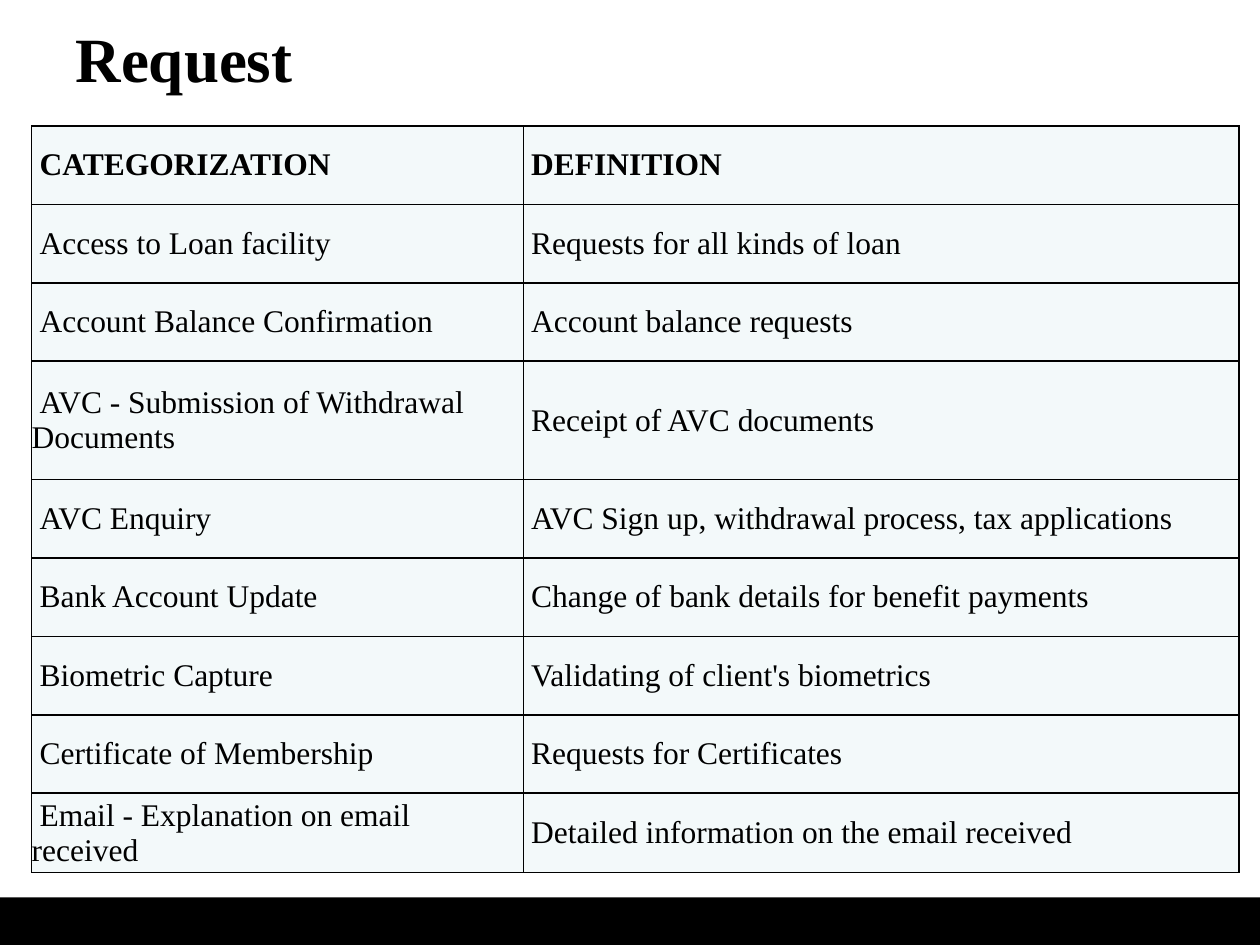
from lxml.etree import SubElement
from pptx import Presentation
from pptx.dml.color import RGBColor
from pptx.enum.shapes import MSO_SHAPE
from pptx.enum.text import MSO_ANCHOR, PP_ALIGN
from pptx.oxml.ns import qn
from pptx.util import Cm, Pt

TITLE = "Request"
ROWS = [
    ("CATEGORIZATION", "DEFINITION"),
    ("Access to Loan facility", "Requests for all kinds of loan"),
    ("Account Balance Confirmation", "Account balance requests"),
    ("AVC - Submission of Withdrawal Documents", "Receipt of AVC documents"),
    ("AVC Enquiry", "AVC Sign up, withdrawal process, tax applications"),
    ("Bank Account Update", "Change of bank details for benefit payments"),
    ("Biometric Capture", "Validating of client's biometrics"),
    ("Certificate of Membership", "Requests for Certificates"),
    ("Email - Explanation on email received", "Detailed information on the email received"),
]
COLUMN_WIDTHS = (9.91, 14.43)
ROW_HEIGHT = 1.58
SPECIAL_HEIGHTS = {3: 2.39, 8: 1.6}
BLACK = "000000"
CELL_FILL = "F3F9FA"
FONT = "Times New Roman"


def paint(fill, color):
    fill.solid()
    fill.fore_color.rgb = RGBColor.from_string(color)


def format_text(paragraph, size, bold):
    paragraph.alignment = PP_ALIGN.LEFT
    font = paragraph.font
    font.name, font.size, font.bold = FONT, Pt(size), bold
    paint(font.fill, BLACK)


def add_borders(cell):
    properties = cell._tc.get_or_add_tcPr()
    for position, side in enumerate(("lnL", "lnR", "lnT", "lnB")):
        line = properties.makeelement(qn(f"a:{side}"), {"w": str(Pt(1))})
        solid = SubElement(line, qn("a:solidFill"))
        SubElement(solid, qn("a:srgbClr"), val=BLACK)
        properties.insert(position, line)


def fill_cell(cell, text, bold):
    cell.margin_left = cell.margin_right = cell.margin_top = cell.margin_bottom = 0
    cell.vertical_anchor = MSO_ANCHOR.MIDDLE
    paint(cell.fill, CELL_FILL)
    add_borders(cell)
    cell.text = text
    paragraph = cell.text_frame.paragraphs[0]
    format_text(paragraph, 18, bold)
    paragraph._p.get_or_add_pPr().set("indent", str(Pt(4.5)))


def add_title(slide):
    title = slide.shapes.title
    title.left, title.top, title.width, title.height = Cm(1.27), Cm(0.2), Cm(22.86), Cm(1.9)
    title.text_frame.text = TITLE
    title.text_frame.vertical_anchor = MSO_ANCHOR.MIDDLE
    format_text(title.text_frame.paragraphs[0], 36, True)


def add_footer_band(slide):
    band = slide.shapes.add_shape(MSO_SHAPE.RECTANGLE, 0, Cm(18.09), Cm(25.4), Cm(0.96))
    band.shadow.inherit = False
    paint(band.fill, BLACK)
    band.line.fill.background()


def add_request_table(slide):
    heights = [SPECIAL_HEIGHTS.get(index, ROW_HEIGHT) for index in range(len(ROWS))]
    table = slide.shapes.add_table(
        len(ROWS), len(COLUMN_WIDTHS), Cm(0.64), Cm(2.54),
        Cm(sum(COLUMN_WIDTHS)), Cm(sum(heights)),
    ).table
    table.horz_banding = False
    for column, width in zip(table.columns, COLUMN_WIDTHS):
        column.width = Cm(width)
    for index, (row, height, texts) in enumerate(zip(table.rows, heights, ROWS)):
        row.height = Cm(height)
        for cell, text in zip(row.cells, texts):
            fill_cell(cell, text, bold=index == 0)


def main():
    presentation = Presentation()
    presentation.slide_width, presentation.slide_height = Cm(25.4), Cm(19.05)
    slide = presentation.slides.add_slide(presentation.slide_layouts[5])
    paint(slide.background.fill, "FFFFFF")
    add_footer_band(slide)
    add_title(slide)
    add_request_table(slide)
    presentation.save("out.pptx")


if __name__ == "__main__":
    main()
